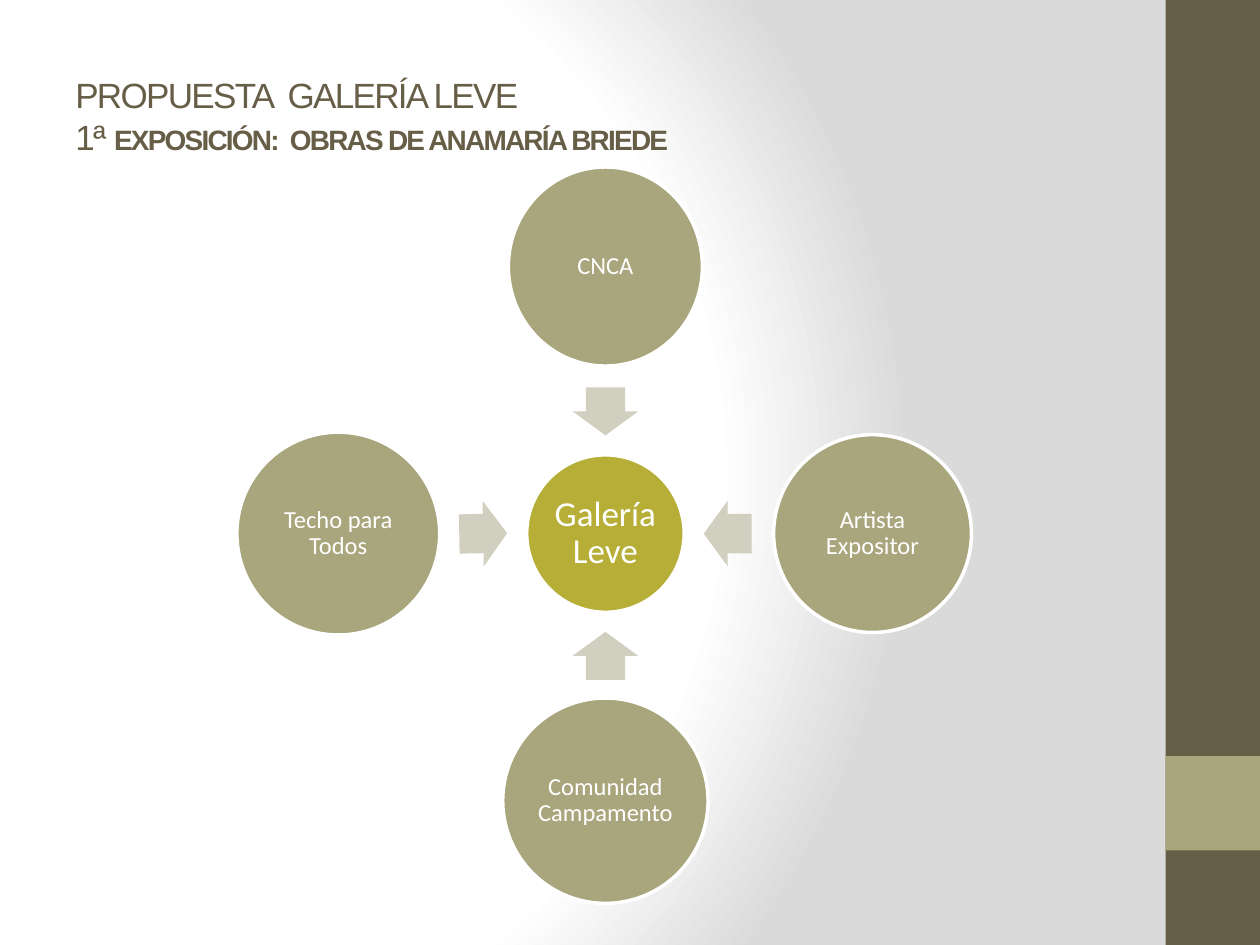
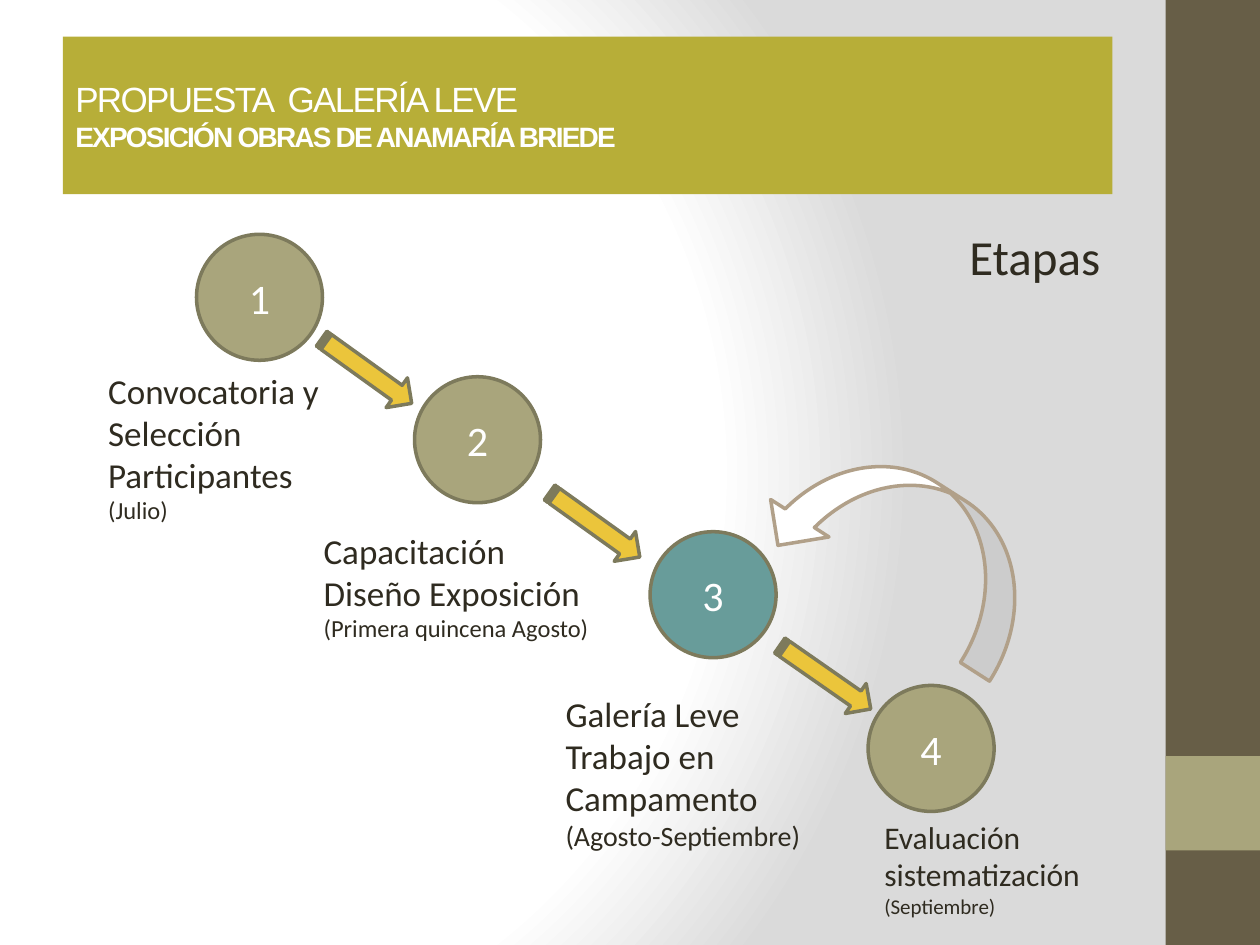
import pptx
import pptx.util
import pptx.oxml
import pptx.oxml.ns
import pptx.dml.color
import pptx.enum.shapes
import pptx.enum.text

PX = 9144  # 100 px to the inch
COLORS = {"dark": "675E47", "khaki": "A9A57C", "olive": "B7AE38", "pale": "D1CFBF",
          "teal": "689C9A", "gold": "EBC53B", "edge": "7D7A5C", "tan": "B1A089",
          "text": "2F2B20", "white": "FFFFFF", "gray": "DADADA"}
BACKGROUND = f"""<p:bg {pptx.oxml.ns.nsdecls('p', 'a')}><p:bgPr>
<a:gradFill rotWithShape="1"><a:gsLst>
<a:gs pos="0"><a:srgbClr val="{COLORS['white']}"/></a:gs>
<a:gs pos="75000"><a:srgbClr val="{COLORS['white']}"/></a:gs>
<a:gs pos="100000"><a:srgbClr val="{COLORS['gray']}"/></a:gs>
</a:gsLst><a:path path="circle"><a:fillToRect l="20000" t="50000" r="100000" b="50000"/></a:path>
</a:gradFill><a:effectLst/></p:bgPr></p:bg>"""
TITLE_BOX = (50, 29, 833, 125)
SHAPE = pptx.enum.shapes.MSO_SHAPE
ALIGN = pptx.enum.text.PP_ALIGN
MIDDLE = pptx.enum.text.MSO_ANCHOR.MIDDLE


def add_shape(s, kind, box, fill=None, line=None, rotation=0):
    """Add a preset shape without shadow; a missing fill or line is left empty."""
    sp = s.shapes.add_shape(kind, *(round(v * PX) for v in box))
    sp.shadow.inherit = False
    sp.rotation = rotation
    if fill:
        sp.fill.solid()
        sp.fill.fore_color.rgb = pptx.dml.color.RGBColor.from_string(COLORS[fill])
    else:
        sp.fill.background()
    if line:
        sp.line.color.rgb = pptx.dml.color.RGBColor.from_string(COLORS[line])
        sp.line.width = pptx.util.Pt(2)
    else:
        sp.line.fill.background()
    sp.text_frame.word_wrap = True
    return sp


def style(p, size, color, font="Calibri", align=ALIGN.LEFT):
    p.alignment = align
    for r in p.runs:
        r.font.size = pptx.util.Pt(size)
        r.font.name = font
        r.font.color.rgb = pptx.dml.color.RGBColor.from_string(COLORS[color])


prs = pptx.Presentation()
prs.slide_width = 1000 * PX
prs.slide_height = 750 * PX

# Shared background, side band and title
titles = [
    ("PROPUESTA  GALERÍA LEVE\v1ª ", "EXPOSICIÓN:  OBRAS DE ANAMARÍA BRIEDE", None, "dark"),
    ("PROPUESTA  GALERÍA LEVE\v", "EXPOSICIÓN OBRAS DE ANAMARÍA BRIEDE", "olive", "white"),
]
for heading, subtitle, fill, color in titles:
    s = prs.slides.add_slide(prs.slide_layouts[6])
    s.element.cSld.insert(0, pptx.oxml.parse_xml(BACKGROUND))
    add_shape(s, SHAPE.RECTANGLE, (925, 0, 75, 750), "dark")
    add_shape(s, SHAPE.RECTANGLE, (925, 600, 75, 75), "khaki")
    tf = add_shape(s, SHAPE.RECTANGLE, TITLE_BOX, fill).text_frame
    tf.vertical_anchor = MIDDLE
    p = tf.paragraphs[0]
    p.text = heading
    r = p.add_run()
    r.text = subtitle
    style(p, 20, color, "Arial")
    r.font.size = pptx.util.Pt(16)
    r.font.bold = True
    for run in p.runs:
        run.font._element.set("spc", "-100")
partners_slide, stages_slide = prs.slides

# Partners around the gallery
HUB_X, HUB_Y = 480.5, 423.5
CIRCLE_DISTANCE, ARROW_DISTANCE = 212, 97
ARROW_W, ARROW_H = 38, 52
circles = [  # text, direction from the hub, size, font size, fill, arrow rotation
    ("Galería Leve", 0, 0, 125, 125, 20, "olive", None),
    ("CNCA", 0, -1, 154, 158, 14, "khaki", 90),
    ("Artista Expositor", 1, 0, 157, 157, 14, "khaki", 180),
    ("Comunidad Campamento", 0, 1, 163, 163, 14, "khaki", 270),
    ("Techo para Todos", -1, 0, 161, 161, 14, "khaki", 359),
]
for text, dx, dy, w, h, size, fill, rotation in circles:
    if rotation is not None:
        x, y = HUB_X + dx * ARROW_DISTANCE, HUB_Y + dy * ARROW_DISTANCE
        box = (x - ARROW_W / 2, y - ARROW_H / 2, ARROW_W, ARROW_H)
        sp = add_shape(partners_slide, SHAPE.RIGHT_ARROW, box, "pale", rotation=rotation)
        sp.adjustments[0] = 0.6
        sp.adjustments[1] = 0.5
    x, y = HUB_X + dx * CIRCLE_DISTANCE, HUB_Y + dy * CIRCLE_DISTANCE
    sp = add_shape(partners_slide, SHAPE.OVAL, (x - w / 2, y - h / 2, w, h), fill, "white")
    tf = sp.text_frame
    tf.margin_left = tf.margin_right = tf.margin_top = tf.margin_bottom = 2 * PX
    tf.vertical_anchor = MIDDLE
    p = tf.paragraphs[0]
    p.text = text
    p.line_spacing = 0.9
    style(p, size, "white", align=ALIGN.CENTER)

# Stages
captions = [  # box, indent, font size, date font size, lines
    ((76, 288, 260, 138), 0, 20, 14, ["Convocatoria y Selección Participantes", "(Julio)"]),
    ((235, 415, 283, 104), 12, 20, 14,
     ["Capacitación", "Diseño Exposición", "(Primera quincena Agosto)"]),
    ((427, 545, 386, 165), 12, 20, 16,
     ["Galería Leve", "Trabajo en", "Campamento", "(Agosto-Septiembre)"]),
    ((680, 644, 236, 94), 12, 18, 12, ["Evaluación", "sistematización", "(Septiembre)"]),
    ((50, 175, 833, 60), 12, 28, 28, ["Etapas"]),
]
for box, indent, size, date_size, lines in captions:
    tf = stages_slide.shapes.add_textbox(*(v * PX for v in box)).text_frame
    tf.word_wrap = True
    tf.text = "\n".join(lines)
    for p in tf.paragraphs:
        p._p.get_or_add_pPr().set("marL", str(indent * PX))
        style(p, size, "text")
    style(p, date_size, "text", align=ALIGN.RIGHT if lines == ["Etapas"] else ALIGN.LEFT)

stages = [(156, 186, "khaki"), (329, 299, "khaki"), (516, 422, "teal"), (689, 544, "khaki")]
for number, (x, y, fill) in enumerate(stages, 1):
    sp = add_shape(stages_slide, SHAPE.OVAL, (x, y, 100, 100), fill, "edge")
    tf = sp.text_frame
    tf.vertical_anchor = MIDDLE
    tf.text = str(number)
    style(tf.paragraphs[0], 24, "white", align=ALIGN.CENTER)

for x, y, rotation in [(247, 280, 35.7), (428, 402, 35.6), (611, 523, 34.9)]:
    add_shape(stages_slide, SHAPE.STRIPED_RIGHT_ARROW, (x, y, 88, 29), "gold", "edge", rotation)
add_shape(stages_slide, SHAPE.CURVED_UP_ARROW, (606, 378, 227, 110), "white", "tan", 212.7)

prs.save("out.pptx")
